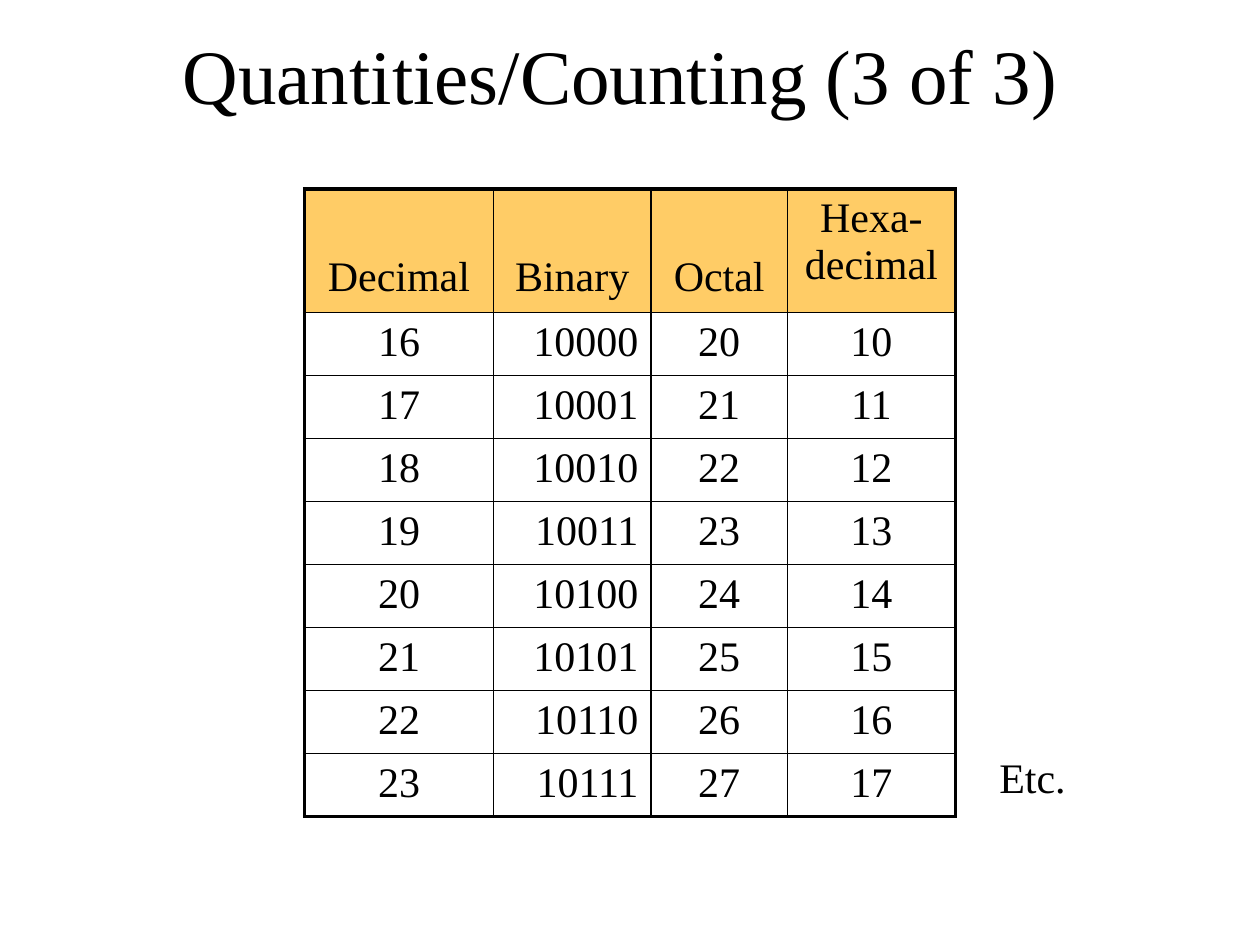
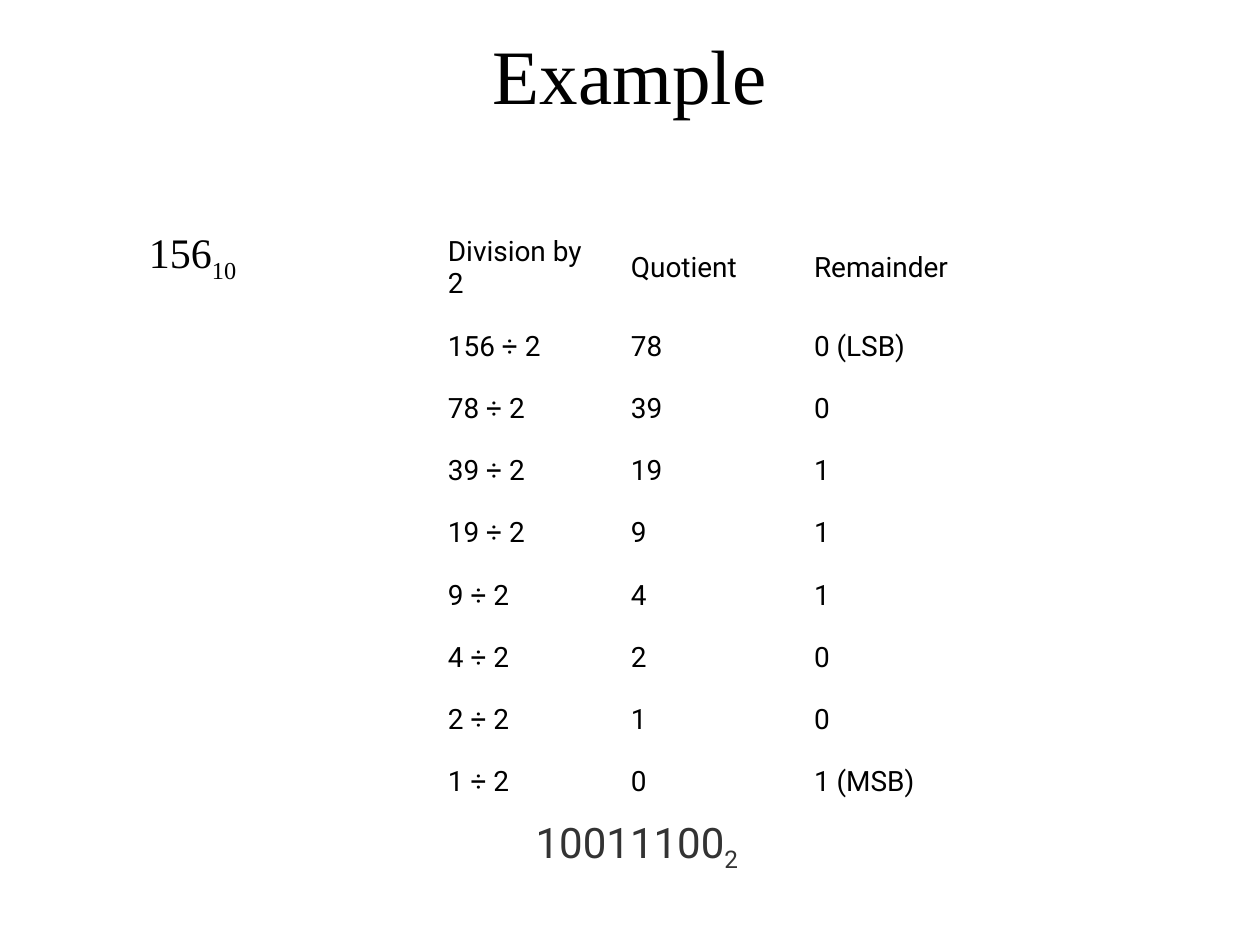
from lxml.etree import SubElement
from pptx import Presentation
from pptx.dml.color import RGBColor
from pptx.enum.text import MSO_ANCHOR as ANCHOR, MSO_AUTO_SIZE as AUTO, PP_ALIGN as ALIGN
from pptx.oxml.ns import qn
from pptx.util import Pt

COUNTING_TITLE = "Quantities/Counting (3 of 3) "
COUNTING_HEADS = ["Decimal", "Binary", "Octal", "Hexa-\ndecimal"]
COUNTED = range(16, 24)
COUNTING_FORMATS = ["d", "b", "o", "X"]
COUNTING_COLS = [108, 90, 78, 96]
COUNTING_ROWS = [70.5] + [36] * len(COUNTED)

EXAMPLE_TITLE = "Example"
EXAMPLE_NUMBER = 156
DIVISION_HEADS = ["Division by 2", "Quotient", "Remainder"]
DIVISION_COLS = [104.6] * 3
DIVISION_ROW = 35.6

SERIF, SANS = "Times New Roman", "Roboto"
BLACK = RGBColor(0x00, 0x00, 0x00)
DARK_GRAY = RGBColor(0x33, 0x33, 0x33)
HEAD_FILL = RGBColor(0xFF, 0xCC, 0x66)
NO_GRID_STYLE = "{2D5ABB26-0587-4C30-8999-92F81FD0307C}"
THICK, THIN = 2.25, 1


def write(tf, text, sub="", size=24, font=SERIF, color=BLACK, align=ALIGN.LEFT):
    """Fill the first paragraph; sub is set as a subscript after the text."""
    p = tf.paragraphs[0]
    p.alignment = align
    runs = []
    for i, line in enumerate(text.split("\n")):
        if i:
            p.add_line_break()
        r = p.add_run()
        r.text = line
        runs.append(r)
    if sub:
        r = p.add_run()
        r.text = sub
        r._r.get_or_add_rPr().set("baseline", "-25000")
        runs.append(r)
    for r in runs:
        r.font.size = Pt(size)
        r.font.name = font
        r.font.color.rgb = color


def add_text(s, box, text, wrap=True, anchor=ANCHOR.TOP, fit=True, **fmt):
    tf = s.shapes.add_textbox(*map(Pt, box)).text_frame
    tf.word_wrap = wrap
    tf.auto_size = AUTO.SHAPE_TO_FIT_TEXT if fit else AUTO.NONE
    tf.vertical_anchor = anchor
    write(tf, text, **fmt)


def add_titled_slide(prs, title):
    s = prs.slides.add_slide(prs.slide_layouts[6])
    add_text(s, (54, 12, 612, 60), title, anchor=ANCHOR.MIDDLE, fit=False,
             size=44, align=ALIGN.CENTER)
    return s


def add_plain_table(s, left, top, cols, rows):
    frame = s.shapes.add_table(len(rows), len(cols), Pt(left), Pt(top),
                               Pt(sum(cols)), Pt(sum(rows)))
    table = frame.table
    table.first_row = table.horz_banding = False
    table._tbl.tblPr.find(qn("a:tableStyleId")).text = NO_GRID_STYLE
    for col, width in zip(table.columns, cols):
        col.width = Pt(width)
    for row, height in zip(table.rows, rows):
        row.height = Pt(height)
    return table


def set_borders(cell, **widths):
    tcPr = cell._tc.get_or_add_tcPr()
    for side in "LRTB":
        ln = SubElement(tcPr, qn(f"a:ln{side}"), w=str(Pt(widths[side])))
        fill = SubElement(ln, qn("a:solidFill"))
        SubElement(fill, qn("a:srgbClr"), val=str(BLACK))


def build_counting(prs):
    s = add_titled_slide(prs, COUNTING_TITLE)
    data = [COUNTING_HEADS]
    data += [[format(n, f) for f in COUNTING_FORMATS] for n in COUNTED]
    table = add_plain_table(s, 174, 108, COUNTING_COLS, COUNTING_ROWS)
    last_row, last_col = len(data) - 1, len(COUNTING_HEADS) - 1
    for i, row in enumerate(data):
        for j, text in enumerate(row):
            cell = table.cell(i, j)
            set_borders(cell, L=THIN if j else THICK, T=THIN if i else THICK,
                        R=THICK if j == last_col else THIN,
                        B=THICK if i == last_row else THIN)
            is_binary = i > 0 and COUNTING_FORMATS[j] == "b"
            write(cell.text_frame, text, align=ALIGN.RIGHT if is_binary else ALIGN.CENTER)
            if i:
                cell.fill.background()
                continue
            cell.fill.solid()
            cell.fill.fore_color.rgb = HEAD_FILL
            if "\n" not in text:
                cell.vertical_anchor = ANCHOR.BOTTOM
                cell.margin_bottom = Pt(7)
    add_text(s, (564, 426, 52.5, 36), "Etc.", wrap=False)


def divisions(n):
    """Rows of repeated division by two, first and last remainder labelled."""
    rows = []
    while n:
        rows.append([f"{n} ÷ 2", str(n // 2), str(n % 2)])
        n //= 2
    rows[0][-1] += " (LSB)"
    rows[-1][-1] += " (MSB)"
    return rows


def build_example(prs):
    s = add_titled_slide(prs, EXAMPLE_TITLE)
    add_text(s, (78, 126, 67, 36), str(EXAMPLE_NUMBER), sub="10", wrap=False)
    data = [DIVISION_HEADS] + divisions(EXAMPLE_NUMBER)
    table = add_plain_table(s, 246, 126, DIVISION_COLS, [DIVISION_ROW] * len(data))
    for i, row in enumerate(data):
        for j, text in enumerate(row):
            cell = table.cell(i, j)
            cell.fill.background()
            cell.vertical_anchor = ANCHOR.MIDDLE
            cell.margin_left, cell.margin_right = Pt(10), Pt(6.5)
            cell.margin_top = cell.margin_bottom = Pt(7.9)
            write(cell.text_frame, text, size=16, font=SANS)
    add_text(s, (299, 463, 360, 36), format(EXAMPLE_NUMBER, "b"), sub="2",
             font=SANS, color=DARK_GRAY)


def main():
    prs = Presentation()
    prs.slide_width, prs.slide_height = Pt(720), Pt(540)
    build_counting(prs)
    build_example(prs)
    prs.save("out.pptx")


if __name__ == "__main__":
    main()
